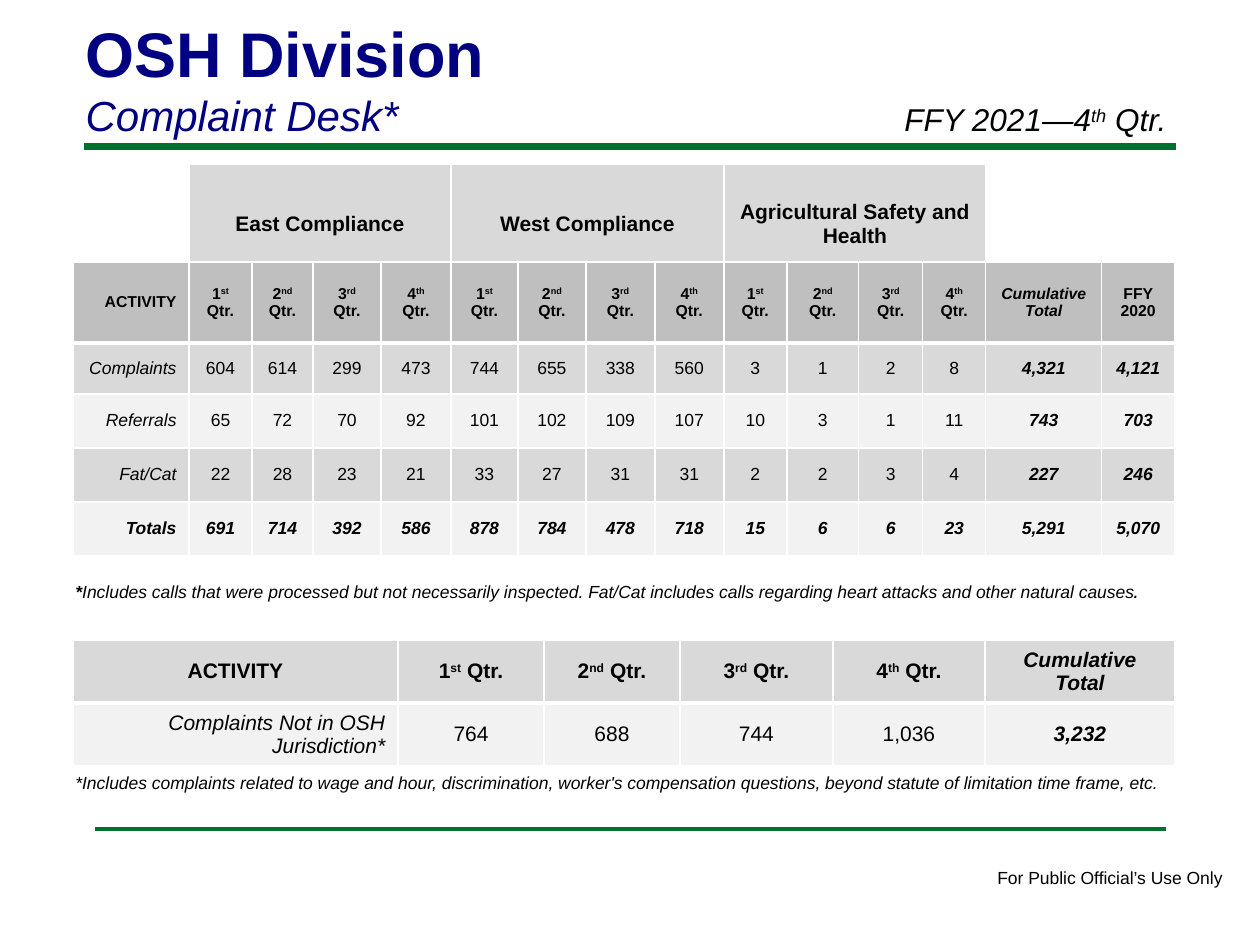
from dataclasses import dataclass, field

from lxml import etree
from pptx import Presentation
from pptx.dml.color import RGBColor
from pptx.enum.shapes import MSO_CONNECTOR
from pptx.enum.text import MSO_ANCHOR, MSO_AUTO_SIZE, PP_ALIGN
from pptx.oxml.ns import qn
from pptx.util import Emu, Inches, Pt

STRAIGHT = MSO_CONNECTOR.STRAIGHT
TOP, MIDDLE = MSO_ANCHOR.TOP, MSO_ANCHOR.MIDDLE
NO_AUTOFIT = MSO_AUTO_SIZE.NONE
LEFT, CENTER, RIGHT = PP_ALIGN.LEFT, PP_ALIGN.CENTER, PP_ALIGN.RIGHT

BLACK = RGBColor(0x00, 0x00, 0x00)
NAVY = RGBColor(0x00, 0x00, 0x80)
GREEN = RGBColor(0x00, 0x70, 0x30)
WHITE = RGBColor(0xFF, 0xFF, 0xFF)
DARK_GRAY = RGBColor(0xBF, 0xBF, 0xBF)
MID_GRAY = RGBColor(0xD9, 0xD9, 0xD9)
LIGHT_GRAY = RGBColor(0xF2, 0xF2, 0xF2)

PX_PER_INCH = 126


@dataclass(frozen=True)
class Style:
    size: int
    bold: bool = False
    italic: bool = False
    color: RGBColor = BLACK


@dataclass(frozen=True)
class Cell:
    text: str
    style: Style
    fill: RGBColor
    align: PP_ALIGN = CENTER


@dataclass(frozen=True)
class Grid:
    left: int
    top: int
    columns: list[int]
    rows: list[int]
    cells: list[list[Cell]]


@dataclass(frozen=True)
class Note:
    left: int
    top: int
    width: int
    height: int
    pieces: list[tuple[str, Style]]
    wrap: bool = True


@dataclass(frozen=True)
class Rule:
    left: int
    right: int
    y: int
    weight: int = field(default=2)


NOTE = Style(10, italic=True)
GROUP_HEAD = Style(12, bold=True)
QUARTER_HEAD = Style(9, bold=True)
COUNT = Style(10)
LABEL = Style(10, italic=True)
TOTAL = Style(10, bold=True, italic=True)

QUARTERS = [f"{n}^{suffix}^ Qtr." for n, suffix in enumerate(("st", "nd", "rd", "th"), 1)]

ACTIVITY_COUNTS = {
    "Complaints": [604, 614, 299, 473, 744, 655, 338, 560, 3, 1, 2, 8, 4321, 4121],
    "Referrals": [65, 72, 70, 92, 101, 102, 109, 107, 10, 3, 1, 11, 743, 703],
    "Fat/Cat": [22, 28, 23, 21, 33, 27, 31, 31, 2, 2, 3, 4, 227, 246],
    "Totals": [691, 714, 392, 586, 878, 784, 478, 718, 15, 6, 6, 23, 5291, 5070],
}
OUTSIDE_COUNTS = [764, 688, 744, 1036]

RULES = [Rule(84, 1176, 147, 4), Rule(95, 1166, 829)]

NOTES = [
    Note(985, 861, 253, 34, [("For Public Official’s Use Only", COUNT)], wrap=False),
    Note(63, 571, 1113, 38, [
        ("*", TOTAL),
        ("Includes calls that were processed but not necessarily inspected. "
         "Fat/Cat includes calls regarding heart attacks and other natural causes", NOTE),
        (".", Style(12, italic=True)),
    ]),
    Note(63, 766, 1124, 34, [
        ("*Includes complaints related to wage and hour, discrimination, worker's "
         "compensation questions, beyond statute of limitation time frame, etc.", NOTE),
    ]),
    Note(892, 94, 315, 50, [("FFY 2021—4^th^ Qtr.", Style(18, italic=True))]),
]


def px(length: int) -> Emu:
    return Emu(round(length * Inches(1) / PX_PER_INCH))


def add_text(paragraph, text: str, style: Style) -> None:
    """Add runs; the parts of the text between carets are superscript."""
    for index, piece in enumerate(text.split("^")):
        run = paragraph.add_run()
        run.text = piece
        values = {"name": "Arial", "size": Pt(style.size),
                  "bold": style.bold, "italic": style.italic}
        for name, value in values.items():
            setattr(run.font, name, value)
        run.font.color.rgb = style.color
        if index % 2:
            run.font._element.set("baseline", "30000")


def set_borders(cell, bottom_weight: int) -> None:
    properties = cell._tc.get_or_add_tcPr()
    weights = {"a:lnL": 1, "a:lnR": 1, "a:lnT": 1, "a:lnB": bottom_weight}
    for index, (tag, weight) in enumerate(weights.items()):
        border = etree.Element(qn(tag), w=str(Pt(weight)))
        fill = etree.SubElement(border, qn("a:solidFill"))
        etree.SubElement(fill, qn("a:srgbClr"), val=str(WHITE))
        properties.insert(index, border)


def add_grid(slide, grid: Grid) -> None:
    table = slide.shapes.add_table(
        len(grid.rows), len(grid.columns), px(grid.left), px(grid.top),
        px(sum(grid.columns)), px(sum(grid.rows))).table
    table.first_row = table.horz_banding = False
    for column, width in zip(table.columns, grid.columns):
        column.width = px(width)
    for row_index, (row, height) in enumerate(zip(table.rows, grid.rows)):
        row.height = px(height)
        for cell, content in zip(row.cells, grid.cells[row_index]):
            cell.fill.solid()
            cell.fill.fore_color.rgb = content.fill
            cell.vertical_anchor = MIDDLE
            paragraph = cell.text_frame.paragraphs[0]
            paragraph.alignment = content.align
            add_text(paragraph, content.text, content.style)
            set_borders(cell, 1 if row_index else 3)


def add_note(slide, note: Note) -> None:
    frame = slide.shapes.add_textbox(
        px(note.left), px(note.top), px(note.width), px(note.height)).text_frame
    frame.word_wrap = note.wrap
    for text, style in note.pieces:
        add_text(frame.paragraphs[0], text, style)


def add_rule(slide, rule: Rule) -> None:
    connector = slide.shapes.add_connector(
        STRAIGHT, px(rule.left), px(rule.y), px(rule.right), px(rule.y))
    connector.line.color.rgb = GREEN
    connector.line.width = Pt(rule.weight)
    etree.SubElement(connector._element.spPr, qn("a:effectLst"))


def format_title(title) -> None:
    place = {"left": px(73), "top": px(8), "width": px(1040), "height": px(140)}
    for name, value in place.items():
        setattr(title, name, value)
    frame = title.text_frame
    frame.word_wrap = True
    frame.auto_size = NO_AUTOFIT
    frame.vertical_anchor = TOP
    heading, subheading = frame.paragraphs[0], frame.add_paragraph()
    heading.alignment = subheading.alignment = LEFT
    add_text(heading, "OSH Division", Style(36, bold=True, color=NAVY))
    add_text(subheading, "Complaint Desk*", Style(24, italic=True, color=NAVY))


def compliance_grid() -> Grid:
    groups = ["East Compliance", "West Compliance", "Agricultural Safety and Health"]
    return Grid(189, 164, [262, 273, 262], [120],
                [[Cell(group, GROUP_HEAD, MID_GRAY) for group in groups]])


def activity_grid() -> Grid:
    cells = [[Cell("ACTIVITY", QUARTER_HEAD, DARK_GRAY, RIGHT),
              *(Cell(quarter, QUARTER_HEAD, DARK_GRAY) for quarter in QUARTERS * 3),
              Cell("Cumulative Total", Style(9, bold=True, italic=True), DARK_GRAY),
              Cell("FFY 2020", QUARTER_HEAD, DARK_GRAY)]]
    for index, (activity, counts) in enumerate(ACTIVITY_COUNTS.items()):
        fill = LIGHT_GRAY if index % 2 else MID_GRAY
        is_total = activity == "Totals"
        cells.append([Cell(activity, TOTAL if is_total else LABEL, fill, RIGHT)] + [
            Cell(f"{count:,}", TOTAL if is_total or column >= 12 else COUNT, fill)
            for column, count in enumerate(counts)])
    columns = [116, 63, 61, 68, 70, 67, 68, 69, 69, 63, 72, 64, 63, 116, 73]
    return Grid(73, 262, columns, [81, 51, 54, 54, 54], cells)


def outside_grid() -> Grid:
    total = Style(12, bold=True, italic=True)
    header = [Cell(text, GROUP_HEAD, MID_GRAY) for text in ["ACTIVITY", *QUARTERS]]
    header.append(Cell("Cumulative Total", total, MID_GRAY))
    body = [Cell("Complaints Not in OSH Jurisdiction*", Style(12, italic=True), LIGHT_GRAY, RIGHT),
            *(Cell(f"{count:,}", Style(12), LIGHT_GRAY) for count in OUTSIDE_COUNTS),
            Cell(f"{sum(OUTSIDE_COUNTS):,}", total, LIGHT_GRAY)]
    return Grid(73, 640, [325, 146, 136, 153, 152, 190], [63, 63], [header, body])


def main() -> None:
    deck = Presentation()
    deck.slide_width, deck.slide_height = px(1260), px(945)
    slide = deck.slides.add_slide(deck.slide_layouts[5])
    format_title(slide.shapes.title)
    for rule in RULES:
        add_rule(slide, rule)
    for grid in (compliance_grid(), outside_grid(), activity_grid()):
        add_grid(slide, grid)
    for note in NOTES:
        add_note(slide, note)
    deck.save("out.pptx")


if __name__ == "__main__":
    main()
